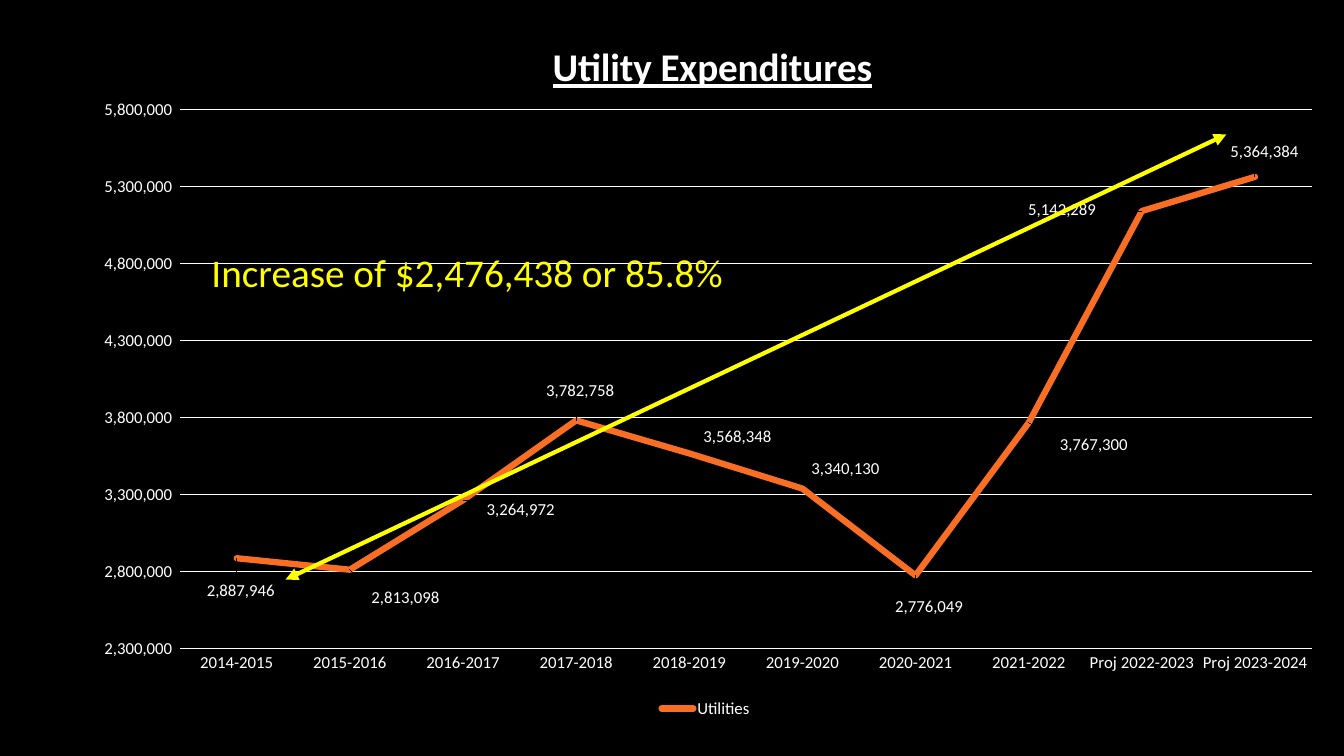
from lxml import etree
from pptx import Presentation
from pptx import util as u
from pptx.chart import data as chart_data
from pptx.dml.color import RGBColor
from pptx.enum import chart as charts, shapes, text
from pptx.oxml import ns

BLACK = RGBColor(0x00, 0x00, 0x00)
WHITE = RGBColor(0xFF, 0xFF, 0xFF)
YELLOW = RGBColor(0xFF, 0xFF, 0x00)
ORANGE = RGBColor(0xF8, 0x6E, 0x24)

EXPENDITURES = [
    ("2014-2015", 2887946, (4, 31)),
    ("2015-2016", 2813098, (53, 27)),
    ("2016-2017", 3264972, (55, 9)),
    ("2017-2018", 3782758, (4, -28)),
    ("2018-2019", 3568348, (46, -16)),
    ("2019-2020", 3340130, (41, -19)),
    ("2020-2021", 2776049, (13, 30)),
    ("2021-2022", 3767300, (62, 21)),
    ("Proj 2022-2023", 5142289, (-76, -1)),
    ("Proj 2023-2024", 5364384, (9, -24)),
]
AMOUNT = '_(* #,##0_);_(* \\(#,##0\\);_(* "-"_);_(@_)'


def px(length):
    return u.Emu(length * 9525)


def make_layout(**values):
    layout = etree.Element(ns.qn("c:layout"))
    manual = etree.SubElement(layout, ns.qn("c:manualLayout"))
    for name, value in values.items():
        etree.SubElement(manual, ns.qn(f"c:{name}")).set("val", str(value))
    return layout


class SlideBuilder:
    font_name = "Calibri"
    label_size = 12
    headline_size = 28

    def __init__(self, page):
        self.page = page

    def background(self, color):
        fill = self.page.background.fill
        fill.solid()
        fill.fore_color.rgb = color

    def style_font(self, font, size, color):
        font.name = self.font_name
        font.size = u.Pt(size)
        font.color.rgb = color

    def style_line(self, line, color, width):
        line.color.rgb = color
        line.width = u.Pt(width)

    def line_chart(self, left, top, width, height, title, series_name, rows):
        source = chart_data.CategoryChartData(number_format=AMOUNT)
        source.categories = [year for year, _, _ in rows]
        source.add_series(series_name, [value for _, value, _ in rows])
        frame = self.page.shapes.add_chart(
            charts.XL_CHART_TYPE.LINE, px(left), px(top), px(width), px(height), source)
        chart = frame.chart
        self.style_font(chart.font, 10, WHITE)
        self.chart_title(chart, title)
        self.chart_axes(chart)
        self.chart_legend(chart)
        plot = chart.plots[0]
        plot.vary_by_categories = False
        series = plot.series[0]
        series.smooth = False
        series.marker.style = charts.XL_MARKER_STYLE.NONE
        self.style_line(series.format.line, ORANGE, 4.5)
        series.format.line._get_or_add_ln().set("cap", "rnd")
        self.chart_labels(series, [offset for _, _, offset in rows], width, height)
        area = chart._chartSpace.chart.plotArea
        for layout in area.findall(ns.qn("c:layout")):
            area.remove(layout)
        area.insert(0, make_layout(layoutTarget="inner", xMode="edge", yMode="edge",
                                   x=0.083, y=0.142, w=0.898, h=0.755))

    def chart_title(self, chart, words):
        chart.has_title = True
        title = chart.chart_title
        span = title.text_frame.paragraphs[0].add_run()
        span.text = words
        self.style_font(span.font, self.headline_size, WHITE)
        span.font.bold = True
        span.font.underline = True
        title.include_in_layout = False
        element = title._element
        for layout in element.findall(ns.qn("c:layout")):
            element.remove(layout)
        element.find(ns.qn("c:tx")).addnext(
            make_layout(xMode="edge", yMode="edge", x=0.373, y=0.035))

    def chart_axes(self, chart):
        for axis in (chart.category_axis, chart.value_axis):
            axis.major_tick_mark = charts.XL_TICK_MARK.NONE
            axis.minor_tick_mark = charts.XL_TICK_MARK.NONE
            self.style_font(axis.tick_labels.font, self.label_size, WHITE)
        self.style_line(chart.category_axis.format.line, WHITE, 0.75)
        values = chart.value_axis
        values.format.line.fill.background()
        values.minimum_scale = 2300000
        values.maximum_scale = 5800000
        values.major_unit = 500000
        values.has_major_gridlines = True
        self.style_line(values.major_gridlines.format.line, WHITE, 0.75)
        values.tick_labels.number_format = AMOUNT
        values.tick_labels.number_format_is_linked = False

    def chart_legend(self, chart):
        chart.has_legend = True
        chart.legend.position = charts.XL_LEGEND_POSITION.BOTTOM
        chart.legend.include_in_layout = False
        self.style_font(chart.legend.font, self.label_size, WHITE)

    def chart_labels(self, series, offsets, width, height):
        labels = series.data_labels
        labels.show_value = True
        labels.number_format = AMOUNT
        labels.number_format_is_linked = False
        self.style_font(labels.font, self.label_size, WHITE)
        for index, (across, down) in enumerate(offsets):
            label = series.points[index].data_label
            self.style_font(label.font, self.label_size, WHITE)
            label.position = charts.XL_LABEL_POSITION.CENTER
            element = labels._element.findall(ns.qn("c:dLbl"))[index]
            element.find(ns.qn("c:idx")).addnext(
                make_layout(x=round(across / width, 4), y=round(down / height, 4)))

    def double_arrow(self, left, top, right, bottom, color):
        arrow = self.page.shapes.add_connector(
            shapes.MSO_CONNECTOR.STRAIGHT, px(left), px(top), px(right), px(bottom))
        self.style_line(arrow.line, color, 3)
        stroke = arrow.line._get_or_add_ln()
        for end in ("a:headEnd", "a:tailEnd"):
            etree.SubElement(stroke, ns.qn(end)).set("type", "triangle")
        etree.SubElement(arrow._element.spPr, ns.qn("a:effectLst"))

    def text_box(self, left, top, width, height, words, color):
        box = self.page.shapes.add_textbox(px(left), px(top), px(width), px(height))
        box.text_frame.word_wrap = False
        box.text_frame.auto_size = text.MSO_AUTO_SIZE.SHAPE_TO_FIT_TEXT
        span = box.text_frame.paragraphs[0].add_run()
        span.text = words
        self.style_font(span.font, self.headline_size, color)


def main():
    deck = Presentation()
    deck.slide_width, deck.slide_height = px(1280), px(720)
    builder = SlideBuilder(deck.slides.add_slide(deck.slide_layouts[6]))
    builder.background(BLACK)
    builder.line_chart(72, 8, 1200, 680, "Utility Expenditures", "Utilities", EXPENDITURES)
    builder.double_arrow(272, 552, 1168, 128, YELLOW)
    builder.text_box(192, 232, 510, 55, "Increase of $2,476,438 or 85.8%", YELLOW)
    deck.save("out.pptx")


if __name__ == "__main__":
    main()
